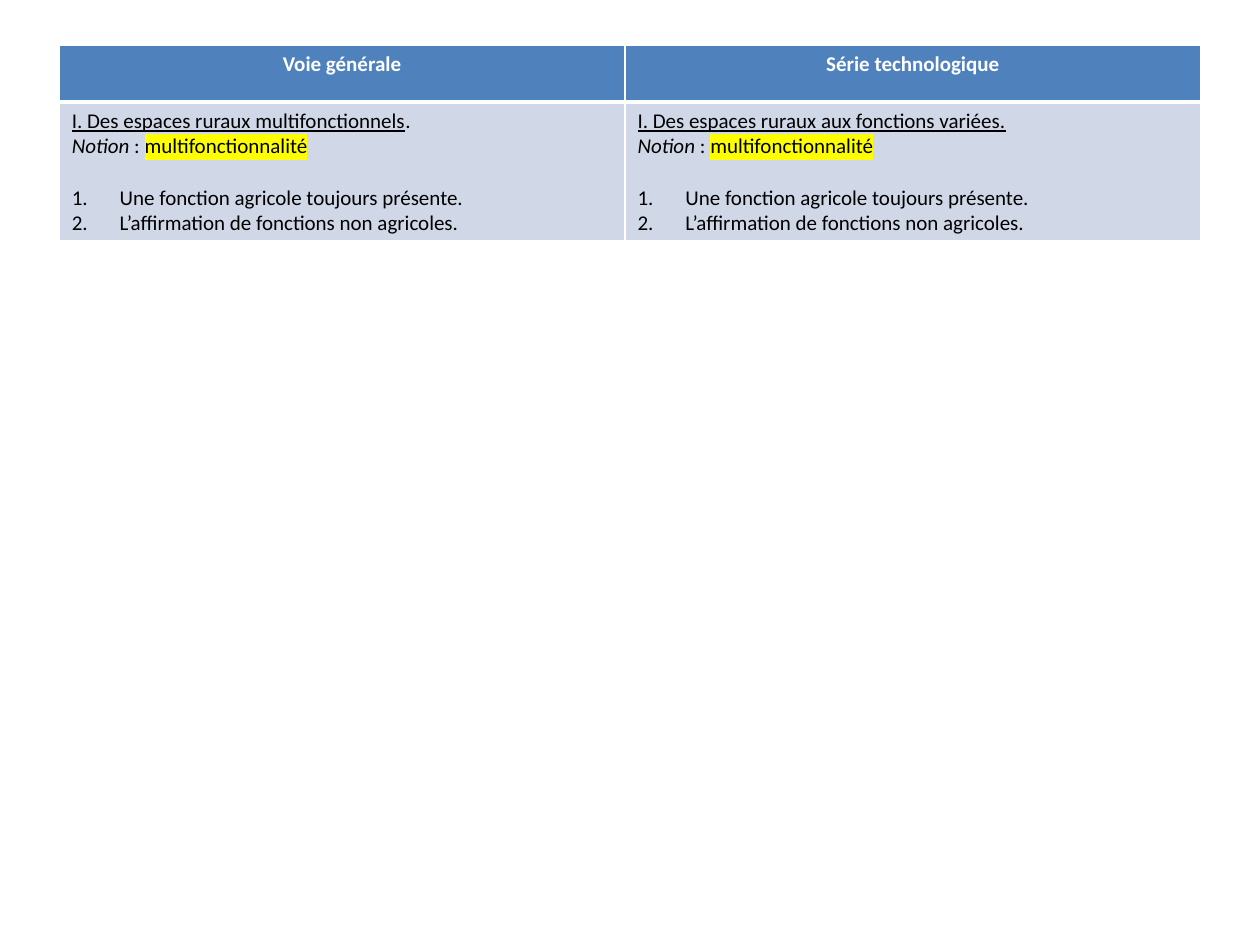
"""Build a slide comparing the general and technological syllabus in a table."""
from lxml.etree import SubElement
from pptx import Presentation
from pptx.dml.color import RGBColor
from pptx.enum.text import PP_ALIGN
from pptx.oxml import parse_xml
from pptx.oxml.ns import nsdecls, qn
from pptx.util import Inches, Pt

COLORS = {"header": "4F81BD", "body": "D0D8E8", "rule": "FFFFFF",
          "light": "FFFFFF", "dark": "000000", "marker": "FFFF00"}
NOTION = [("Notion ", {"italic": True}), (": ", {}), ("multifonctionnalité", {"marker": True})]
FUNCTIONS = ["Une fonction agricole toujours présente.", "L’affirmation de fonctions non agricoles."]
TRACKS = [
    ("Voie générale", 4.49,
     [("I. Des espaces ruraux multifonctionnels", {"underline": True}), (".", {})]),
    ("Série technologique", 4.57,
     [("I. Des espaces ruraux aux fonctions variées.", {"underline": True})]),
]


def format_cell(cell, fill, edges):
    margins = {"margin_left": 0.1, "margin_right": 0.1, "margin_top": 0.05, "margin_bottom": 0.03}
    for name, value in margins.items():
        setattr(cell, name, Inches(value))
    cell.fill.solid()
    cell.fill.fore_color.rgb = RGBColor.from_string(COLORS[fill])
    properties = cell._tc.get_or_add_tcPr()
    for index, (edge, width) in enumerate(edges.items()):
        properties.insert(index, parse_xml(
            f'<a:{edge} {nsdecls("a")} w="{Pt(width)}"><a:solidFill>'
            f'<a:srgbClr val="{COLORS["rule"]}"/></a:solidFill></a:{edge}>'))


def write_paragraph(paragraph, runs, color, alignment):
    paragraph.alignment = alignment
    for text, style in runs:
        run = paragraph.add_run()
        run.text = text
        formats = {"size": Pt(12), "name": "Calibri", "bold": False,
                   "italic": False, "underline": False} | style
        marked = formats.pop("marker", False)
        for name, value in formats.items():
            setattr(run.font, name, value)
        run.font.color.rgb = RGBColor.from_string(COLORS[color])
        if marked:
            run._r.rPr.find(qn("a:solidFill")).addnext(parse_xml(
                f'<a:highlight {nsdecls("a")}><a:srgbClr val="{COLORS["marker"]}"/></a:highlight>'))


prs = Presentation()
prs.slide_width, prs.slide_height = Inches(10), Inches(7.5)
slide = prs.slides.add_slide(prs.slide_layouts[6])
syllabus = slide.shapes.add_table(
    2, 2, Inches(0.47), Inches(0.36), Inches(9.06), Inches(1.55)).table
syllabus.rows[0].height = Inches(0.45)
syllabus.rows[1].height = Inches(1.1)

for column, (track, width, heading) in enumerate(TRACKS):
    syllabus.columns[column].width = Inches(width)
    header, outline = syllabus.cell(0, column), syllabus.cell(1, column)
    format_cell(header, "header", {"lnL": 1, "lnR": 1, "lnT": 1, "lnB": 3})
    format_cell(outline, "body", {"lnL": 1, "lnR": 1, "lnT": 3, "lnB": 1})
    write_paragraph(header.text_frame.paragraphs[0], [(track, {"bold": True})],
                    "light", PP_ALIGN.CENTER)

    frame = outline.text_frame
    write_paragraph(frame.paragraphs[0], heading, "dark", PP_ALIGN.JUSTIFY)
    write_paragraph(frame.add_paragraph(), NOTION, "dark", PP_ALIGN.JUSTIFY)
    for number, function in enumerate(FUNCTIONS):
        item = frame.add_paragraph()
        properties = item._p.get_or_add_pPr()
        properties.set("marL", str(Inches(0.38)))
        properties.set("indent", str(Inches(-0.38)))
        SubElement(properties, qn("a:buFont"), typeface="+mj-lt")
        SubElement(properties, qn("a:buAutoNum"), type="arabicPeriod")
        if number == 0:
            item.space_before = Pt(14.6)
        write_paragraph(item, [(function, {})], "dark", PP_ALIGN.JUSTIFY)

prs.save("out.pptx")
